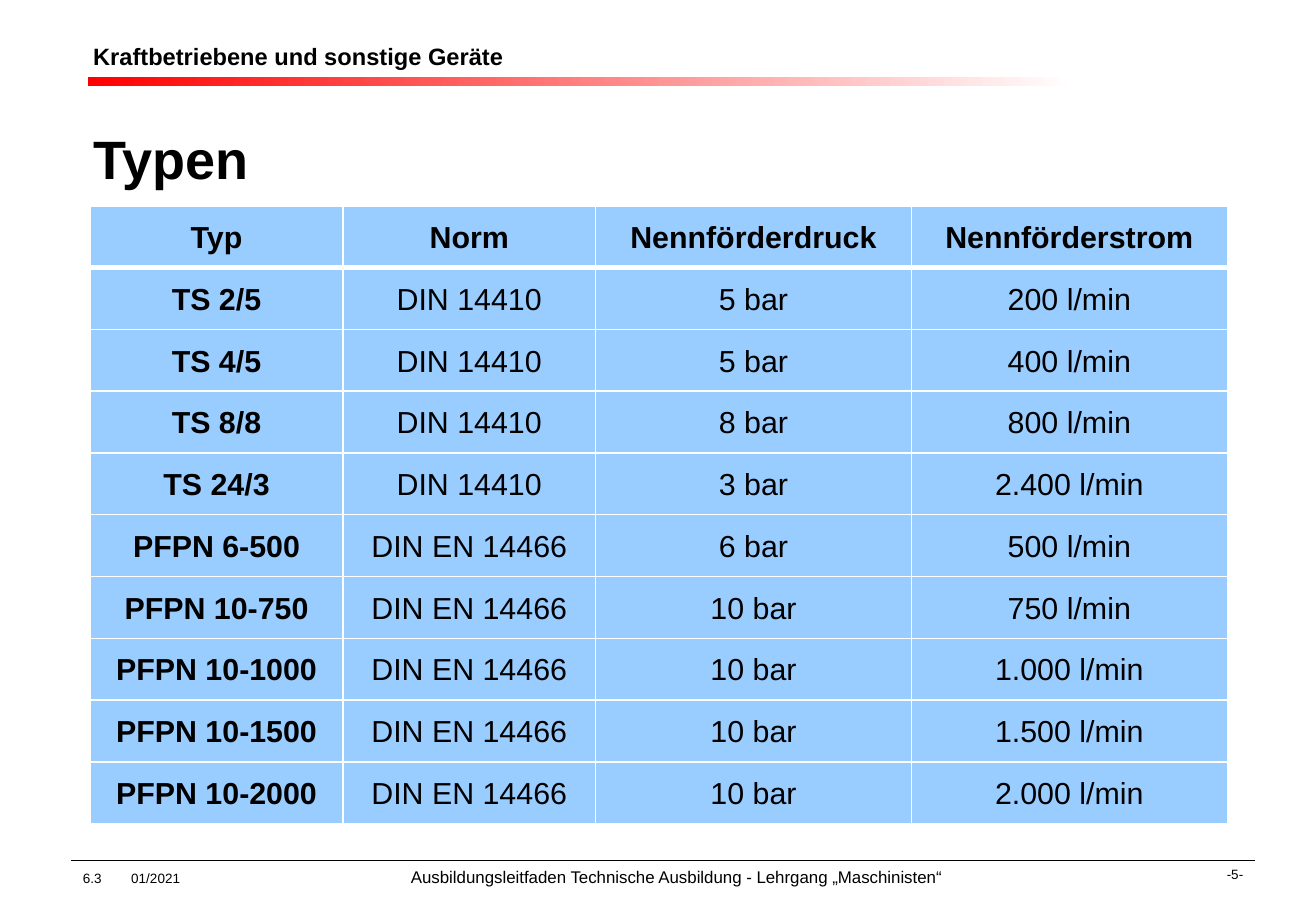
from pptx import Presentation
from pptx.dml.color import RGBColor
from pptx.enum.shapes import MSO_CONNECTOR, MSO_SHAPE
from pptx.enum.text import MSO_ANCHOR, MSO_AUTO_SIZE, PP_ALIGN
from pptx.oxml.ns import qn
from pptx.util import Pt
from lxml.etree import SubElement

BLACK, WHITE, RED, BLUE = "000000", "FFFFFF", "FF0000", "99CCFF"
COLUMN_SHARES = [4, 4, 5, 5]
PUMPS = [
    ["Typ", "Norm", "Nennförderdruck", "Nennförderstrom"],
    ["TS 2/5", "DIN 14410", "5 bar", "200 l/min"],
    ["TS 4/5", "DIN 14410", "5 bar", "400 l/min"],
    ["TS 8/8", "DIN 14410", "8 bar", "800 l/min"],
    ["TS 24/3", "DIN 14410", "3 bar", "2.400 l/min"],
    ["PFPN 6-500", "DIN EN 14466", "6 bar", "500 l/min"],
    ["PFPN 10-750", "DIN EN 14466", "10 bar", "750 l/min"],
    ["PFPN 10-1000", "DIN EN 14466", "10 bar", "1.000 l/min"],
    ["PFPN 10-1500", "DIN EN 14466", "10 bar", "1.500 l/min"],
    ["PFPN 10-2000", "DIN EN 14466", "10 bar", "2.000 l/min"],
]


def color(hex_string):
    return RGBColor.from_string(hex_string)


def format_run(r, size, bold=False):
    r.font.name = "Arial"
    r.font.size = Pt(size)
    r.font.bold = bold
    r.font.color.rgb = color(BLACK)


def place(sp, left, top, width, height):
    sp.left, sp.top, sp.width, sp.height = Pt(left), Pt(top), Pt(width), Pt(height)


def fill_placeholder(sp, text, size, anchor):
    tf = sp.text_frame
    tf.text = text
    tf.word_wrap = True
    tf.auto_size = MSO_AUTO_SIZE.NONE
    tf.vertical_anchor = anchor
    p = tf.paragraphs[0]
    p.alignment = PP_ALIGN.LEFT
    p.space_before = Pt(0)
    format_run(p.runs[0], size, bold=True)
    return p


def add_header(slide, left, top, width, height):
    # Chapter title
    title = slide.shapes.title
    place(title, left, top, 378, height)
    fill_placeholder(title, "Kraftbetriebene und sonstige Geräte", 14, MSO_ANCHOR.MIDDLE)

    # Fading red bar
    bar = slide.shapes.add_shape(MSO_SHAPE.RECTANGLE, Pt(left + 4), Pt(top + height - 2.5),
                                 Pt(width), Pt(5.5))
    bar.shadow.inherit = False
    bar.line.fill.background()
    bar.fill.gradient()
    bar.fill.gradient_angle = 0
    for stop, position, hex_string in zip(bar.fill.gradient_stops, (0, 1), (RED, WHITE)):
        stop.position = position
        stop.color.rgb = color(hex_string)


def add_heading(slide, left, top, width, height):
    body = slide.placeholders[1]
    place(body, left, top, width, height)
    p = fill_placeholder(body, "Typen", 32, MSO_ANCHOR.TOP)
    body.text_frame.margin_top = Pt(7)
    pPr = p._p.get_or_add_pPr()
    pPr.set("marL", "0")
    pPr.set("indent", "0")
    SubElement(pPr, qn("a:buNone"))


def add_borders(cell, top, bottom):
    tcPr = cell._tc.get_or_add_tcPr()
    for side, width in (("L", 1), ("R", 1), ("T", top), ("B", bottom)):
        ln = SubElement(tcPr, qn(f"a:ln{side}"), w=str(Pt(width)))
        fill = SubElement(ln, qn("a:solidFill"))
        SubElement(fill, qn("a:srgbClr"), val=WHITE)


def add_pump_table(slide, left, top, width, height):
    table = slide.shapes.add_table(len(PUMPS), len(COLUMN_SHARES), Pt(left), Pt(top),
                                   Pt(width), Pt(height)).table
    table.horz_banding = False
    for column, share in zip(table.columns, COLUMN_SHARES):
        column.width = Pt(width * share / sum(COLUMN_SHARES))
    for i, values in enumerate(PUMPS):
        table.rows[i].height = Pt(height / len(PUMPS))
        for j, value in enumerate(values):
            cell = table.cell(i, j)
            add_borders(cell, top=3 if i == 1 else 1, bottom=3 if i == 0 else 1)
            cell.fill.solid()
            cell.fill.fore_color.rgb = color(BLUE)
            cell.vertical_anchor = MSO_ANCHOR.MIDDLE
            cell.margin_left = cell.margin_right = Pt(5)
            cell.margin_top = cell.margin_bottom = 0
            cell.text_frame.text = value
            p = cell.text_frame.paragraphs[0]
            p.alignment = PP_ALIGN.CENTER
            p.line_spacing = 1.07
            p.space_after = Pt(3)
            format_run(p.runs[0], 18, bold=i == 0 or j == 0)


def add_footer_text(slide, left, top, width, height, parts, align, tabs=()):
    tf = slide.shapes.add_textbox(Pt(left), Pt(top), Pt(width), Pt(height)).text_frame
    tf.word_wrap = True
    p = tf.paragraphs[0]
    p.alignment = align
    if tabs:
        tab_list = SubElement(p._p.get_or_add_pPr(), qn("a:tabLst"))
        for position in tabs:
            SubElement(tab_list, qn("a:tab"), pos=str(Pt(position)), algn="l")
    for text, size in parts:
        r = p.add_run()
        r.text = text
        format_run(r, size)


def add_footer(slide, left, top, width, height):
    # Rule above the footer
    rule = slide.shapes.add_connector(MSO_CONNECTOR.STRAIGHT, Pt(left), Pt(top),
                                      Pt(left + width), Pt(top))
    rule.line.color.rgb = color(BLACK)
    rule.line.width = Pt(0.75)
    SubElement(rule._element.spPr, qn("a:effectLst"))

    # Page number and course line
    add_footer_text(slide, left + width - 162, top, 162, height, [("-5-", 8)], PP_ALIGN.RIGHT)
    course = "Ausbildungsleitfaden Technische Ausbildung - Lehrgang „Maschinisten“"
    add_footer_text(slide, left, top, 595, height,
                    [("6.3\t01/2021\t", 8), (course, 10)], PP_ALIGN.LEFT, tabs=(28.7, 194.5))


def main():
    prs = Presentation()
    prs.slide_width, prs.slide_height = Pt(780), Pt(540)
    slide = prs.slides.add_slide(prs.slide_layouts[1])
    add_header(slide, 48, 18, 585, 30)
    add_heading(slide, 48, 67.5, 696, 416)
    add_pump_table(slide, 53.5, 122, 674, 366.5)
    add_footer(slide, 42, 510, 702, 17.5)
    prs.save("out.pptx")


if __name__ == "__main__":
    main()
